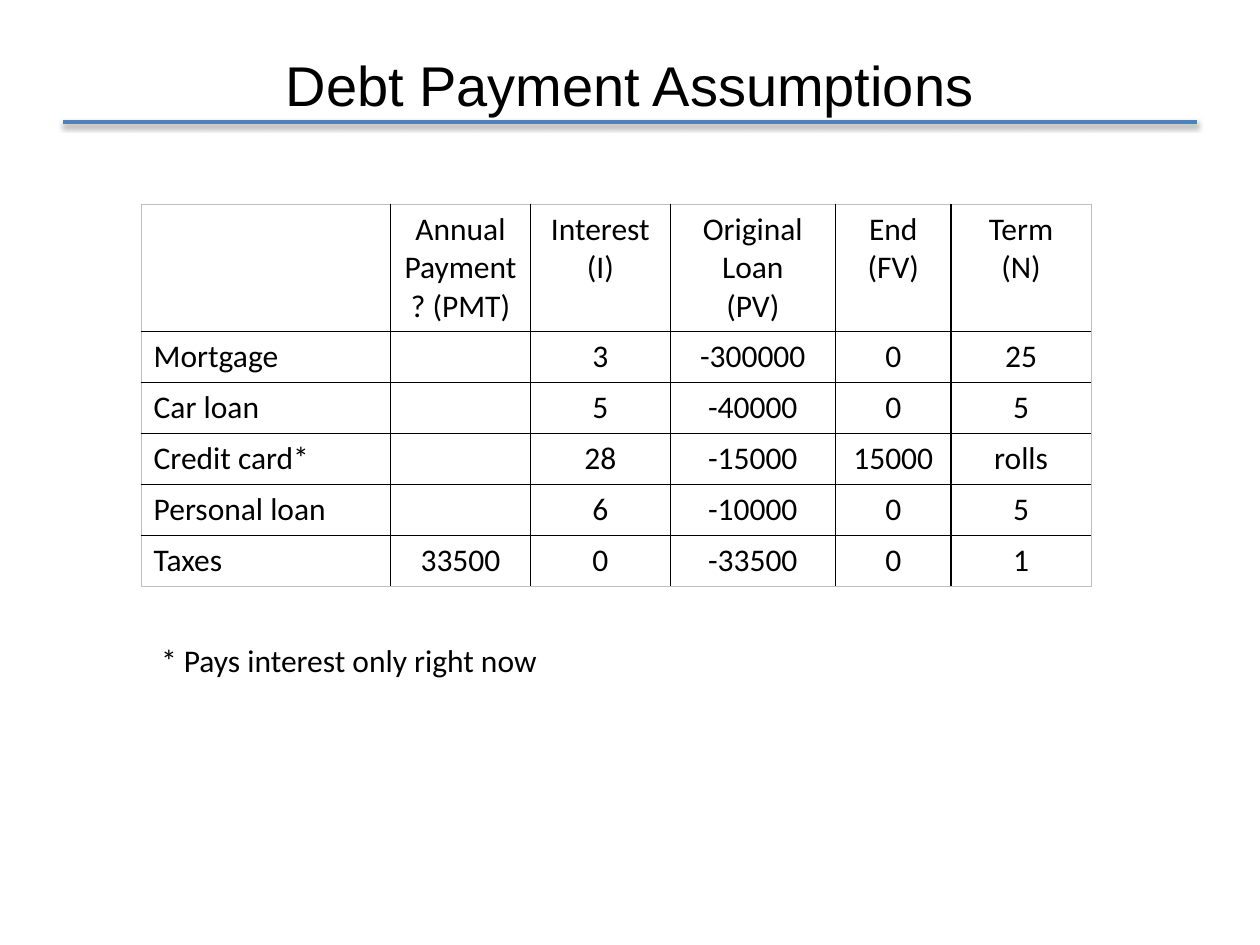
import dataclasses

import pptx
import pptx.dml.color
import pptx.enum.shapes
import pptx.enum.text
import pptx.oxml
import pptx.oxml.ns
import pptx.util

Pt, Inches = pptx.util.Pt, pptx.util.Inches
RGB = pptx.dml.color.RGBColor.from_string
ALIGN = pptx.enum.text.PP_ALIGN
ANCHOR = pptx.enum.text.MSO_ANCHOR
NS = pptx.oxml.ns.nsdecls("a")

WIDTH, HEIGHT = 10, 7.5
MARGIN = 0.05 * WIDTH
COLORS = {"text": "000000", "rule": "4F81BD", "grid": "000000", "edge": "BFBFBF"}
HEADER_HEIGHT, ROW_HEIGHT = 1.01, 0.405


@dataclasses.dataclass
class Column:
    heading: str
    width: float
    values: list[str]
    align: int = ALIGN.CENTER


@dataclasses.dataclass
class Label:
    text: str
    left: float
    top: float
    width: float
    height: float
    size: int
    font: str
    align: int = ALIGN.LEFT
    anchor: int = ANCHOR.TOP
    wrap: bool = True
    bottom_inset: float = 0.05


COLUMNS = [
    Column("", 1.98, ["Mortgage", "Car loan", "Credit card*", "Personal loan", "Taxes"], ALIGN.LEFT),
    Column("Annual\nPayment\n? (PMT)", 1.11, ["", "", "", "", "33500"]),
    Column("Interest\n(I)", 1.11, ["3", "5", "28", "6", "0"]),
    Column("Original Loan\n(PV)", 1.31, ["-300000", "-40000", "-15000", "-10000", "-33500"]),
    Column("End\n(FV)", 0.92, ["0", "0", "15000", "0", "0"]),
    Column("Term\n(N)", 1.11, ["25", "5", "rolls", "5", "1"]),
]

LABELS = [
    # The bottom inset lifts the title above the rule
    Label("Debt Payment Assumptions", MARGIN, 0.3, WIDTH - 2 * MARGIN, 1.25, 32, "Arial",
          ALIGN.CENTER, ANCHOR.MIDDLE, bottom_inset=0.56),
    Label("* Pays interest only right now", 1.18, 5.04, 3.24, 0.4, 18, "Calibri", wrap=False),
]


def write(tf, text: str, size: int, font: str, align: int) -> None:
    tf.text = text
    for p in tf.paragraphs:
        p.alignment = align
        p.font.size = Pt(size)
        p.font.name = font
        p.font.color.rgb = RGB(COLORS["text"])


def add_label(slide, label: Label) -> None:
    sp = slide.shapes.add_textbox(*map(Inches, (label.left, label.top, label.width, label.height)))
    tf = sp.text_frame
    tf.word_wrap = label.wrap
    tf.vertical_anchor = label.anchor
    tf.margin_bottom = Inches(label.bottom_inset)
    write(tf, label.text, label.size, label.font, label.align)


def add_rule(slide, y: float) -> None:
    line = slide.shapes.add_connector(
        pptx.enum.shapes.MSO_CONNECTOR.STRAIGHT,
        *map(Inches, (MARGIN, y, WIDTH - MARGIN, y)))
    line.line.color.rgb = RGB(COLORS["rule"])
    line.line.width = Pt(2)
    line._element.spPr.append(pptx.oxml.parse_xml(
        f'<a:effectLst {NS}><a:outerShdw blurRad="{Pt(3.1)}" dist="{Pt(1.6)}" dir="5400000" '
        'rotWithShape="0"><a:srgbClr val="000000"><a:alpha val="38000"/></a:srgbClr>'
        '</a:outerShdw></a:effectLst>'))


def set_borders(cell, outer: dict[str, bool]) -> None:
    tcPr = cell._tc.get_or_add_tcPr()
    for side, is_outer in outer.items():
        color, width = ("edge", 0.5) if is_outer else ("grid", 1)
        tcPr.append(pptx.oxml.parse_xml(
            f'<a:ln{side} {NS} w="{Pt(width)}"><a:solidFill>'
            f'<a:srgbClr val="{COLORS[color]}"/></a:solidFill></a:ln{side}>'))


def add_loan_table(slide, left: float, top: float) -> None:
    n_rows, n_cols = len(COLUMNS[0].values) + 1, len(COLUMNS)
    heights = [HEADER_HEIGHT] + [ROW_HEIGHT] * (n_rows - 1)
    width = sum(col.width for col in COLUMNS)
    table = slide.shapes.add_table(
        n_rows, n_cols, *map(Inches, (left, top, width, sum(heights)))).table
    table.first_row = table.horz_banding = False
    for row, height in zip(table.rows, heights):
        row.height = Inches(height)
    for c, col in enumerate(COLUMNS):
        table.columns[c].width = Inches(col.width)
        for r, text in enumerate([col.heading, *col.values]):
            cell = table.cell(r, c)
            write(cell.text_frame, text, 18, "Calibri", col.align)
            set_borders(cell, {"L": c == 0, "R": c == n_cols - 1,
                               "T": r == 0, "B": r == n_rows - 1})
            cell.fill.background()


def main() -> None:
    prs = pptx.Presentation()
    prs.slide_width, prs.slide_height = Inches(WIDTH), Inches(HEIGHT)
    slide = prs.slides.add_slide(prs.slide_layouts[6])
    title, footnote = LABELS

    # Title, table, rule and footnote, from back to front
    add_label(slide, title)
    add_loan_table(slide, 1.12, 1.62)
    add_rule(slide, 0.97)
    add_label(slide, footnote)
    prs.save("out.pptx")


if __name__ == "__main__":
    main()
